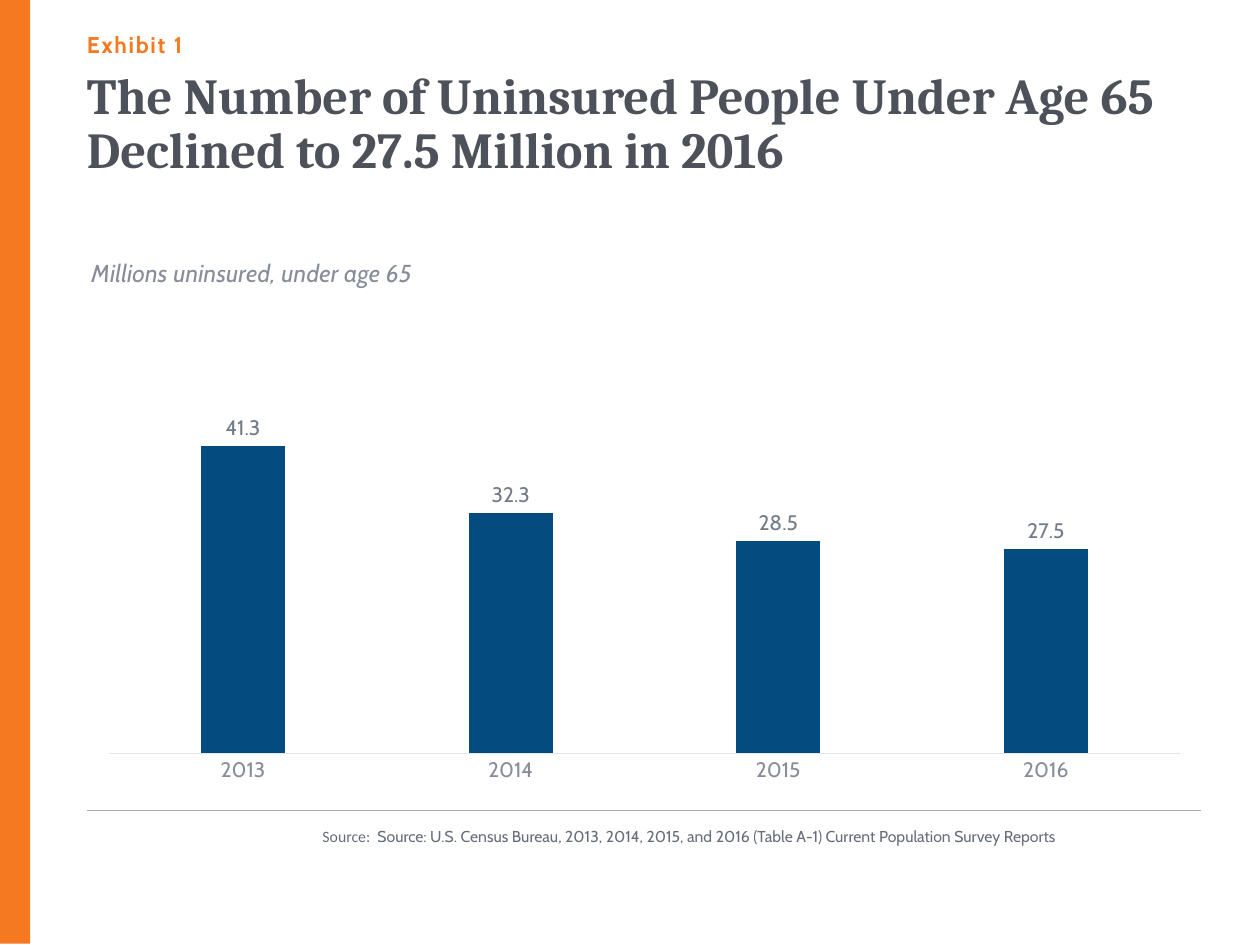
"""Build the exhibit slide on the number of uninsured people under age 65."""
from lxml.etree import SubElement
from pptx import Presentation
from pptx.chart.data import CategoryChartData
from pptx.dml.color import RGBColor
from pptx.enum.chart import XL_CHART_TYPE, XL_LABEL_POSITION, XL_TICK_MARK
from pptx.enum.shapes import MSO_CONNECTOR, MSO_SHAPE
from pptx.enum.text import MSO_ANCHOR
from pptx.oxml.ns import qn
from pptx.util import Inches, Pt

ORANGE = RGBColor(0xF4, 0x79, 0x20)
NAVY = RGBColor(0x04, 0x4C, 0x7F)
DARK = RGBColor(0x4C, 0x51, 0x5A)
SLATE = RGBColor(0x67, 0x6E, 0x7B)
LABEL = RGBColor(0x73, 0x7B, 0x89)
MUTED = RGBColor(0x86, 0x8D, 0x99)
RULE = RGBColor(0xAB, 0xAB, 0xAB)
AXIS = RGBColor(0xE3, 0xE5, 0xE7)
WHITE = RGBColor(0xFF, 0xFF, 0xFF)


def set_font(font, color, **values):
    font.color.rgb = color
    for name, value in values.items():
        setattr(font, name, value)


def set_layout(element, **values):
    layout = element.find(qn("c:layout"))
    if layout is None:
        layout = SubElement(element, qn("c:layout"))
        element.insert(0, layout)
    manual = SubElement(layout, qn("c:manualLayout"))
    for name, value in values.items():
        SubElement(manual, qn(f"c:{name}")).set("val", str(value))


prs = Presentation()
prs.slide_width, prs.slide_height = Inches(10), Inches(7.5)
s = prs.slides.add_slide(prs.slide_layouts[6])
s.background.fill.solid()
s.background.fill.fore_color.rgb = WHITE

bar = s.shapes.add_shape(MSO_SHAPE.RECTANGLE, 0, Inches(-0.01), Inches(0.24), Inches(7.5))
bar.shadow.inherit = False
bar.fill.solid()
bar.fill.fore_color.rgb = ORANGE
bar.line.fill.background()

rule = s.shapes.add_connector(
    MSO_CONNECTOR.STRAIGHT, Inches(0.69), Inches(6.43), Inches(9.53), Inches(6.43))
rule.line.color.rgb = RULE
rule.line.width = Pt(0.75)
SubElement(rule._element.spPr, qn("a:effectLst"))

data = CategoryChartData()
data.categories = ["2013", "2014", "2015", "2016"]
data.add_series("Series 1", (41.3, 32.3, 28.5, 27.5))
chart = s.shapes.add_chart(
    XL_CHART_TYPE.COLUMN_CLUSTERED,
    Inches(0.69), Inches(1.86), Inches(8.85), Inches(4.43), data).chart
set_font(chart.font, DARK, name="Cabin", size=Pt(10))
chart.has_legend = False

title = chart.chart_title
p = title.text_frame.paragraphs[0]
r = p.add_run()
r.text = "Millions uninsured, under age 65"
set_font(r.font, MUTED, name="Cabin", size=Pt(14), italic=True, bold=False)
set_layout(title._element, xMode="edge", yMode="edge", x=0.0, y=0.03)
set_layout(chart._chartSpace.chart.plotArea, layoutTarget="inner",
           xMode="edge", yMode="edge", x=0.02, y=0.13, w=0.96, h=0.8)

axis = chart.category_axis
axis.major_tick_mark = XL_TICK_MARK.NONE
axis.format.line.color.rgb = AXIS
axis.format.line.width = Pt(0.75)
set_font(axis.tick_labels.font, MUTED, name="Cabin", size=Pt(12))

axis = chart.value_axis
axis.minimum_scale, axis.maximum_scale, axis.major_unit = 0, 60, 10
axis.has_major_gridlines = False
axis.visible = False

plot = chart.plots[0]
plot.gap_width, plot.overlap, plot.vary_by_categories = 219, -27, False
plot.series[0].format.fill.solid()
plot.series[0].format.fill.fore_color.rgb = NAVY
plot.has_data_labels = True
labels = plot.data_labels
labels.show_value = True
labels.position = XL_LABEL_POSITION.OUTSIDE_END
set_font(labels.font, LABEL, name="Cabin", size=Pt(12))

texts = [
    ((2.56, 6.56, 6.97, 0.85), MSO_ANCHOR.TOP, 1, 0, [
        ("Source:  ", SLATE, {"name": "Calibri", "size": Pt(9)}),
        ("Source: U.S. Census Bureau, 2013, 2014, 2015, and 2016 (Table A-1) "
         "Current Population Survey Reports", SLATE, {"name": "Cabin", "size": Pt(9)})]),
    ((0.69, 0.19, 8.85, 0.27), MSO_ANCHOR.BOTTOM, 1, 100, [
        ("Exhibit 1", ORANGE, {"name": "Cabin", "size": Pt(13), "bold": True})]),
    ((0.69, 0.56, 8.85, 1.3), MSO_ANCHOR.TOP, 0.9, 0, [
        ("The Number of Uninsured People Under Age 65 Declined to 27.5 Million in 2016",
         DARK, {"name": "Cambria", "size": Pt(28.8), "bold": True})]),
]
for box, anchor, line_spacing, tracking, runs in texts:
    tf = s.shapes.add_textbox(*map(Inches, box)).text_frame
    tf.word_wrap = True
    tf.vertical_anchor = anchor
    for side in ("left", "right", "top", "bottom"):
        setattr(tf, f"margin_{side}", 0)
    p = tf.paragraphs[0]
    p.line_spacing = line_spacing
    for text, color, values in runs:
        r = p.add_run()
        r.text = text
        set_font(r.font, color, **values)
        if tracking:
            r._r.get_or_add_rPr().set("spc", str(tracking))

prs.save("out.pptx")
